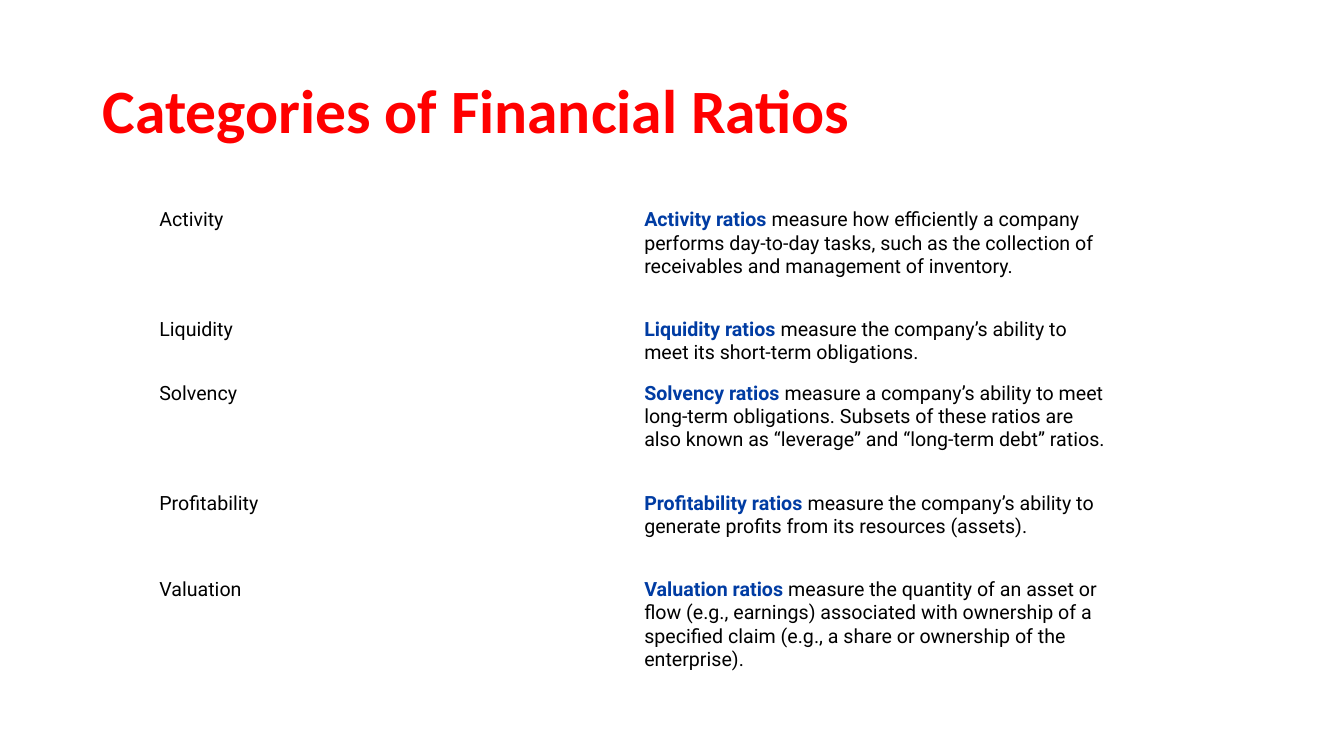
"""Build a slide that lists the categories of financial ratios."""
from dataclasses import dataclass

from pptx import Presentation
from pptx.dml.color import RGBColor
from pptx.enum import text as t
from pptx.util import Inches, Pt


@dataclass(frozen=True)
class Theme:
    """Colours, fonts and type sizes of the slide."""
    red: str = "FF0000"
    blue: str = "003CA3"
    black: str = "000000"
    head: str = "Calibri"
    body: str = "Roboto"
    big: int = 44
    small: int = 14


@dataclass(frozen=True)
class Ratio:
    """One category, its meaning and its row height in inches."""
    name: str
    sense: str
    high: float


THEME = Theme()
RATIOS = [
    Ratio("Activity", "measure how efficiently a company performs day-to-day tasks, "
          "such as the collection of receivables and management of inventory.", 1.09),
    Ratio("Liquidity", "measure the company’s ability to meet its short-term "
          "obligations.", 0.63),
    Ratio("Solvency", "measure a company’s ability to meet long-term obligations. "
          "Subsets of these ratios are also known as “leverage” and "
          "“long-term debt” ratios.", 1.09),
    Ratio("Profitability", "measure the company’s ability to generate profits from "
          "its resources (assets).", 0.86),
    Ratio("Valuation", "measure the quantity of an asset or flow (e.g., earnings) "
          "associated with ownership of a specified claim (e.g., a share or "
          "ownership of the enterprise).", 1.09),
]


def add_run(para, words: str, face: str, size: int, tint: str, bold: bool = False) -> None:
    """Append one styled run to a paragraph."""
    run = para.add_run()
    run.text = words
    run.font.name = face
    run.font.size = Pt(size)
    run.font.bold = bold
    run.font.color.rgb = RGBColor.from_string(tint)


def add_title(slide, words: str) -> None:
    """Draw the slide title."""
    box = slide.shapes.add_textbox(Inches(0.92), Inches(0.4), Inches(11.5), Inches(1.45))
    frame = box.text_frame
    frame.word_wrap = True
    frame.vertical_anchor = t.MSO_ANCHOR.MIDDLE
    para = frame.paragraphs[0]
    para.line_spacing = 0.9
    add_run(para, words, THEME.head, THEME.big, THEME.red, True)


def clear_cell(cell):
    """Remove the fill, set the margins and return the first paragraph."""
    cell.fill.background()
    cell.margin_left = cell.margin_right = Inches(0.08)
    cell.margin_top = cell.margin_bottom = Inches(0.08)
    return cell.text_frame.paragraphs[0]


def add_grid(slide, ratios: list[Ratio]) -> None:
    """Draw the table of names and meanings."""
    high = sum(ratio.high for ratio in ratios)
    grid = slide.shapes.add_table(len(ratios), 2, Inches(1.5), Inches(1.99),
                                  Inches(9.62), Inches(high)).table
    grid.first_row = grid.horz_banding = False
    for row, ratio in zip(grid.rows, ratios):
        row.height = Inches(ratio.high)
        name, sense = [clear_cell(cell) for cell in row.cells]
        add_run(name, ratio.name, THEME.body, THEME.small, THEME.black)
        add_run(sense, f"{ratio.name} ratios", THEME.body, THEME.small, THEME.blue, True)
        add_run(sense, f" {ratio.sense}", THEME.body, THEME.small, THEME.black)


def main() -> None:
    """Build and save the slide."""
    deck = Presentation()
    deck.slide_width, deck.slide_height = Inches(13.33), Inches(7.5)
    slide = deck.slides.add_slide(deck.slide_layouts[6])
    add_title(slide, "Categories of Financial Ratios")
    add_grid(slide, RATIOS)
    deck.save("out.pptx")


if __name__ == "__main__":
    main()
